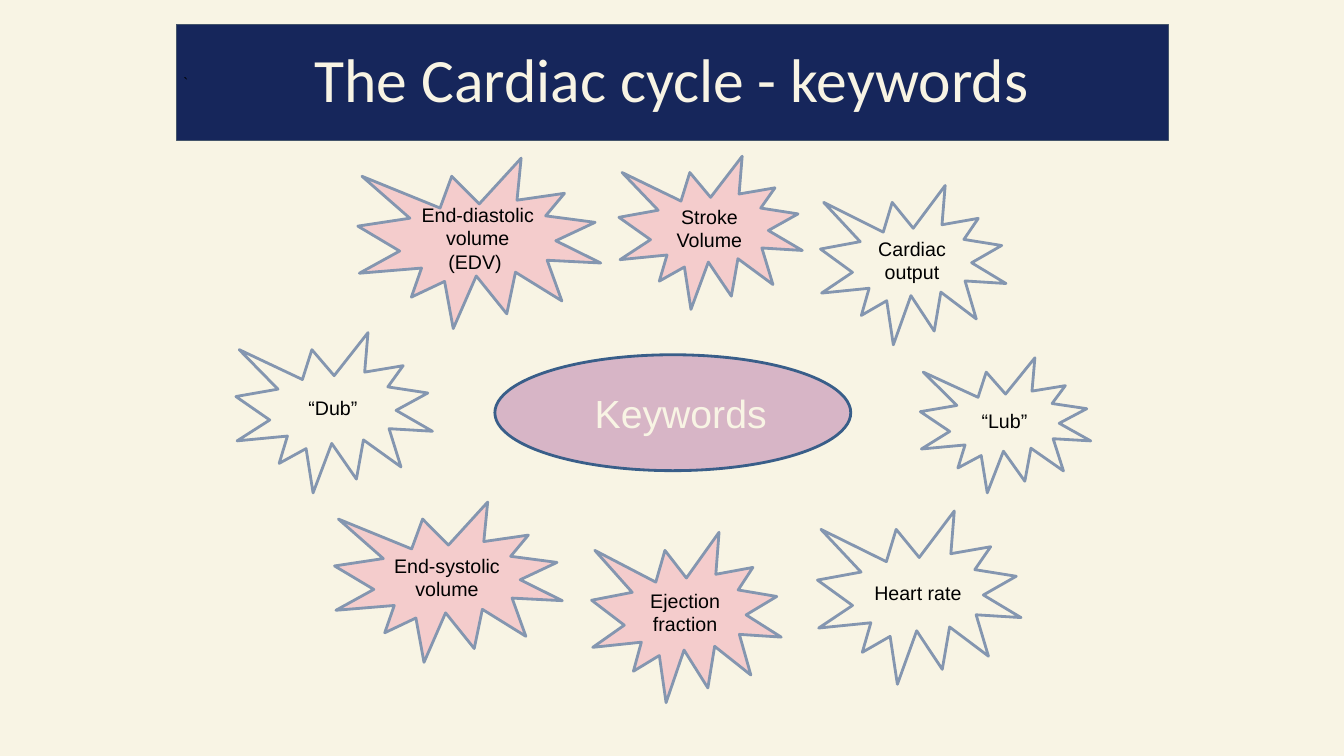
from pptx import Presentation
from pptx.dml.color import RGBColor
from pptx.enum.shapes import MSO_SHAPE
from pptx.enum.text import MSO_ANCHOR, PP_ALIGN
from pptx.util import Pt

RECTANGLE, OVAL, BURST = MSO_SHAPE.RECTANGLE, MSO_SHAPE.OVAL, MSO_SHAPE.EXPLOSION1
TOP, MIDDLE = MSO_ANCHOR.TOP, MSO_ANCHOR.MIDDLE
LEFT, CENTER = PP_ALIGN.LEFT, PP_ALIGN.CENTER

COLORS = {
    "cream": "F8F4E4",
    "navy": "16265B",
    "slate": "44546A",
    "mauve": "D7B5C6",
    "blue": "395E89",
    "pink": "F4CCCC",
    "steel": "8496B0",
    "black": "000000",
}

KEYWORDS = [
    ("End-diastolic volume (EDV) ", "pink", (255.6, 113, 173.5, 121.7)),
    ("“Lub”", "cream", (657.4, 255.6, 121.7, 96.5)),
    ("“Dub”", "cream", (168.5, 237.6, 140.4, 114.5)),
    ("End-systolic volume", "pink", (239, 358.6, 162.7, 114.5)),
    ("Stroke Volume", "pink", (442.1, 111.6, 131, 109.4)),
    ("Ejection fraction", "pink", (422.6, 380.2, 135.4, 121.7)),
    ("Cardiac output", "cream", (586.1, 132.5, 132.5, 113.8)),
    ("Heart rate", "cream", (583.9, 365, 145.4, 123.8)),
]


class KeywordPage:
    def __init__(self, deck):
        self.page = deck.slides.add_slide(deck.slide_layouts[6])
        self.paint(self.page.background.fill, "cream")

    def paint(self, fill, color):
        fill.solid()
        fill.fore_color.rgb = RGBColor.from_string(COLORS[color])

    def label(self, box, text, size, color, font="Arial", align=CENTER,
              anchor=MIDDLE, margins=(7.2, 3.6), indent=0):
        frame = box.text_frame
        frame.word_wrap = True
        frame.vertical_anchor = anchor
        frame.margin_left = frame.margin_right = Pt(margins[0])
        frame.margin_top = frame.margin_bottom = Pt(margins[1])
        para = frame.paragraphs[0]
        para.alignment = align
        if indent:
            para._p.get_or_add_pPr().set("marL", str(Pt(indent)))
        span = para.add_run()
        span.text = text
        span.font.name = font
        span.font.size = Pt(size)
        span.font.color.rgb = RGBColor.from_string(COLORS[color])

    def shape(self, kind, place, fill, line, width):
        box = self.page.shapes.add_shape(kind, *map(Pt, place))
        box.shadow.inherit = False
        self.paint(box.fill, fill)
        self.paint(box.line.fill, line)
        box.line.width = Pt(width)
        return box

    def banner(self, place, text):
        box = self.shape(RECTANGLE, place, "navy", "slate", 0.75)
        self.label(box, text, 10.5, "black", align=LEFT, margins=(5, 5))

    def title(self, place, text):
        box = self.page.shapes.add_textbox(*map(Pt, place))
        self.label(box, text, 44, "cream", font="Calibri", anchor=TOP,
                   margins=(5, 2.9))

    def hub(self, place, text):
        box = self.shape(OVAL, place, "mauve", "blue", 2)
        self.label(box, text, 28, "cream", align=LEFT, margins=(7.2, 7.2),
                   indent=27)

    def burst(self, place, text, fill):
        box = self.shape(BURST, place, fill, "steel", 2)
        self.label(box, text, 14, "black")


def main():
    deck = Presentation()
    deck.slide_width, deck.slide_height = Pt(960), Pt(540)
    page = KeywordPage(deck)
    page.banner((126, 17.3, 708.5, 82.8), "`")
    page.title((202.3, 26.6, 555.1, 82.8), "The Cardiac cycle - keywords")
    page.hub((353.5, 253.4, 254.2, 82.8), "Keywords")
    for text, fill, place in KEYWORDS:
        page.burst(place, text, fill)
    deck.save("out.pptx")


if __name__ == "__main__":
    main()
